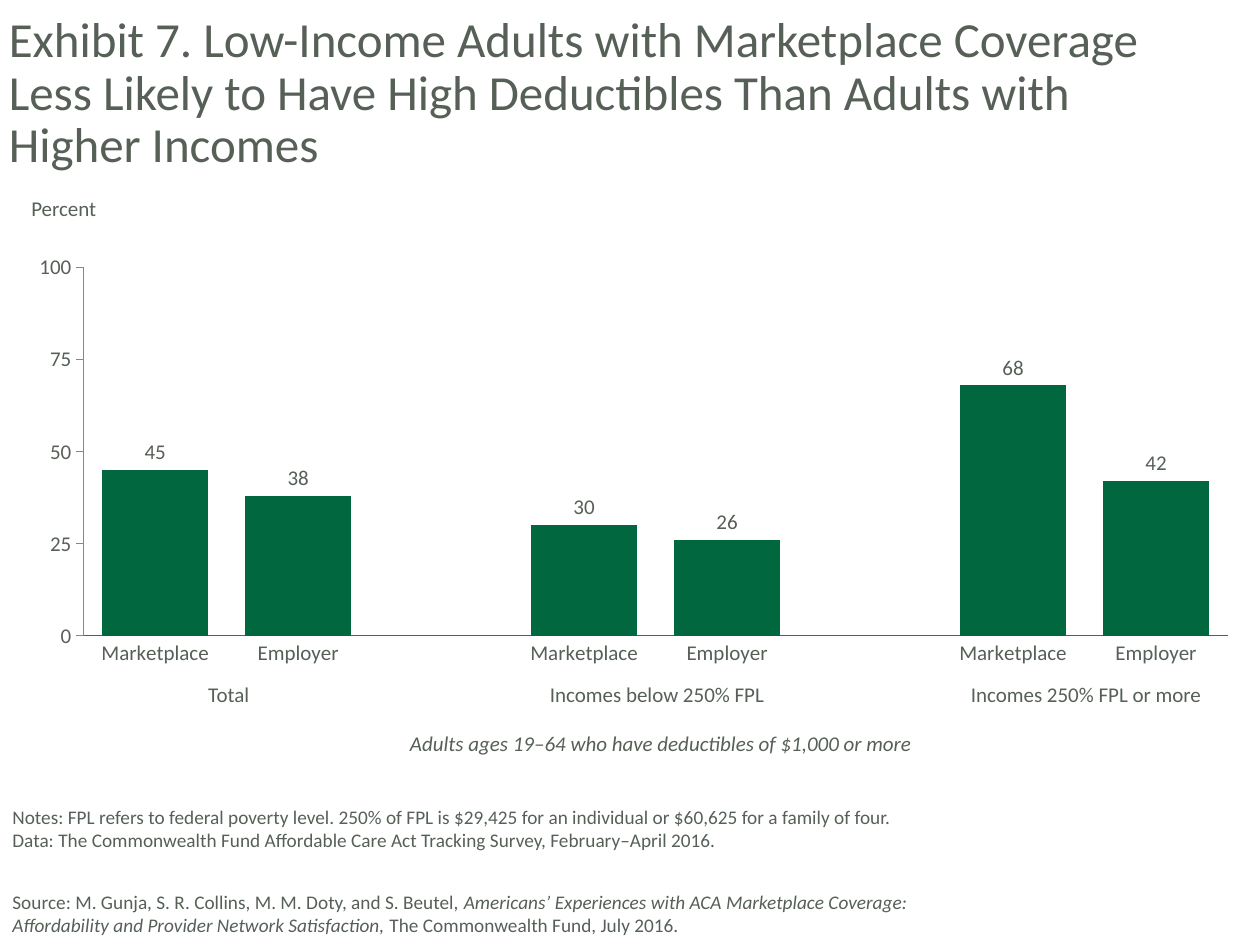
from dataclasses import dataclass

from lxml import etree
from pptx import Presentation
from pptx import util as u
from pptx.chart.data import CategoryChartData
from pptx.dml.color import RGBColor
from pptx.enum import chart as ch
from pptx.enum import text as t
from pptx.oxml.ns import qn

COLORS = {"text": "566057", "bar": "00673F"}
FONT = "Calibri"
COLS, ROWS = 100, 75

prs = Presentation()
prs.slide_width, prs.slide_height = u.Inches(10), u.Inches(7.5)


@dataclass
class Area:
    """Place on the slide, in columns and rows of the grid."""
    col: float
    row: float
    cols: float
    rows: float

    def emu(self) -> tuple[int, int, int, int]:
        w, h = prs.slide_width / COLS, prs.slide_height / ROWS
        return (int(self.col * w), int(self.row * h),
                int(self.cols * w), int(self.rows * h))


@dataclass
class Run:
    text: str
    italic: bool = False


@dataclass
class Label:
    area: Area
    paragraphs: list[list[Run]]
    size: float = 12
    align: t.PP_ALIGN = t.PP_ALIGN.LEFT
    anchor: t.MSO_ANCHOR = t.MSO_ANCHOR.TOP


def color(name: str) -> RGBColor:
    return RGBColor.from_string(COLORS[name])


def style_font(font, size: float, italic: bool = False) -> None:
    for key, value in {"name": FONT, "size": u.Pt(size), "italic": italic}.items():
        setattr(font, key, value)
    font.color.rgb = color("text")


def fill_text(sp, label: Label, **spacing) -> None:
    tf = sp.text_frame
    frame = {"word_wrap": True, "vertical_anchor": label.anchor,
             "auto_size": t.MSO_AUTO_SIZE.SHAPE_TO_FIT_TEXT}
    for key, value in frame.items():
        setattr(tf, key, value)
    for i, runs in enumerate(label.paragraphs):
        p = tf.add_paragraph() if i else tf.paragraphs[0]
        for key, value in {"alignment": label.align, **spacing}.items():
            setattr(p, key, value)
        for run in runs:
            r = p.add_run()
            r.text = run.text
            style_font(r.font, label.size, run.italic)


def add_title(s, label: Label) -> None:
    sp = s.shapes.title
    sp.left, sp.top, sp.width, sp.height = label.area.emu()
    tf = sp.text_frame
    tf.margin_left = tf.margin_right = u.Inches(0.07)
    tf.margin_top = tf.margin_bottom = u.Inches(0.04)
    fill_text(sp, label, line_spacing=u.Pt(30), space_before=u.Pt(0))


def add_label(s, label: Label) -> None:
    fill_text(s.shapes.add_textbox(*label.area.emu()), label)


def insert_layout(parent, index: int, **values) -> None:
    """Give a chart element a manual layout, in shares of the chart's size."""
    for old in parent.findall(qn("c:layout")):
        parent.remove(old)
    layout = etree.Element(qn("c:layout"))
    manual = etree.SubElement(layout, qn("c:manualLayout"))
    for tag, value in values.items():
        etree.SubElement(manual, qn(f"c:{tag}")).set("val", str(value))
    parent.insert(index, layout)


def add_deductible_chart(s, area: Area, groups: list[tuple[int, int]]) -> None:
    names, values = [], []
    for i, pair in enumerate(groups):
        if i:
            names.append("")
            values.append(None)
        names += ["Marketplace", "Employer"]
        values += pair
    data = CategoryChartData(number_format="0")
    data.categories = names
    data.add_series("Series 1", values)
    chart = s.shapes.add_chart(ch.XL_CHART_TYPE.COLUMN_STACKED, *area.emu(), data).chart
    chart.has_legend = chart.has_title = False
    style_font(chart.font, 12)

    plot = chart.plots[0]
    plot.gap_width, plot.overlap, plot.vary_by_categories = 35, 100, False
    series = plot.series[0]
    series.format.fill.solid()
    series.format.fill.fore_color.rgb = color("bar")

    labels = series.data_labels
    labels.show_value, labels.number_format = True, "0"
    labels.number_format_is_linked = False
    labels.position = ch.XL_LABEL_POSITION.INSIDE_END
    style_font(labels.font, 12)
    for i, value in enumerate(values):
        if value is not None:
            series.points[i].data_label.position = ch.XL_LABEL_POSITION.INSIDE_END
    root = chart.element
    for point_label in root.iter(qn("c:dLbl")):
        insert_layout(point_label, 1, x=0, y=-0.08)
    insert_layout(next(root.iter(qn("c:plotArea"))), 0, layoutTarget="inner",
                  xMode="edge", yMode="edge", x=0.056, y=0.03, w=0.934, h=0.84)

    cat, val = chart.category_axis, chart.value_axis
    cat.major_tick_mark = ch.XL_TICK_MARK.NONE
    cat.format.line.color.rgb = color("text")
    cat.format.line.width = u.Pt(0.75)
    axis = {"minimum_scale": 0, "maximum_scale": 100, "major_unit": 25,
            "has_major_gridlines": False, "major_tick_mark": ch.XL_TICK_MARK.OUTSIDE}
    for key, value in axis.items():
        setattr(val, key, value)
    val.tick_labels.number_format = "0"
    val.tick_labels.number_format_is_linked = False


CENTER, BOTTOM = t.PP_ALIGN.CENTER, t.MSO_ANCHOR.BOTTOM
TITLE = Label(Area(0, 0.8, 100, 13.4), [
    [Run("Exhibit 7. Low-Income Adults with Marketplace Coverage")],
    [Run("Less Likely to Have High Deductibles Than Adults with")],
    [Run("Higher Incomes")]], 28)
GROUP_ROW, LINE_ROWS = 53.6, 3
GROUPS = [("Total", 15.4, 5.5), ("Incomes below 250% FPL", 42.2, 19.9),
          ("Incomes 250% FPL or more", 75.8, 20.8)]
LABELS = [
    Label(Area(1.5, 15, 8, LINE_ROWS), [[Run("Percent")]]),
    *(Label(Area(col, GROUP_ROW, cols, LINE_ROWS), [[Run(name)]], align=CENTER)
      for name, col, cols in GROUPS),
    Label(Area(12.9, 57.5, 79.1, LINE_ROWS), [
        [Run("Adults ages 19–64 who have deductibles of $1,000 or more", True)]],
        align=CENTER),
    Label(Area(0, 63.4, 100, 4.7), [
        [Run("Notes: FPL refers to federal poverty level. 250% of FPL is $29,425 "
             "for an individual or $60,625 for a family of four.")],
        [Run("Data: The Commonwealth Fund Affordable Care Act Tracking Survey, "
             "February–April 2016.")]], 11, anchor=BOTTOM),
    Label(Area(0, 70.1, 76.1, 4.7), [
        [Run("Source: M. Gunja, S. R. Collins, M. M. Doty, and S. Beutel, "),
         Run("Americans’ Experiences with ACA Marketplace Coverage: "
             "Affordability and Provider Network Satisfaction,", True),
         Run(" The Commonwealth Fund, July 2016.")]], 11, anchor=BOTTOM),
]


def main() -> None:
    s = prs.slides.add_slide(prs.slide_layouts[5])
    add_deductible_chart(s, Area(1.2, 20.2, 97.2, 34.8), [(45, 38), (30, 26), (68, 42)])
    add_title(s, TITLE)
    for label in LABELS:
        add_label(s, label)
    prs.save("out.pptx")


if __name__ == "__main__":
    main()
